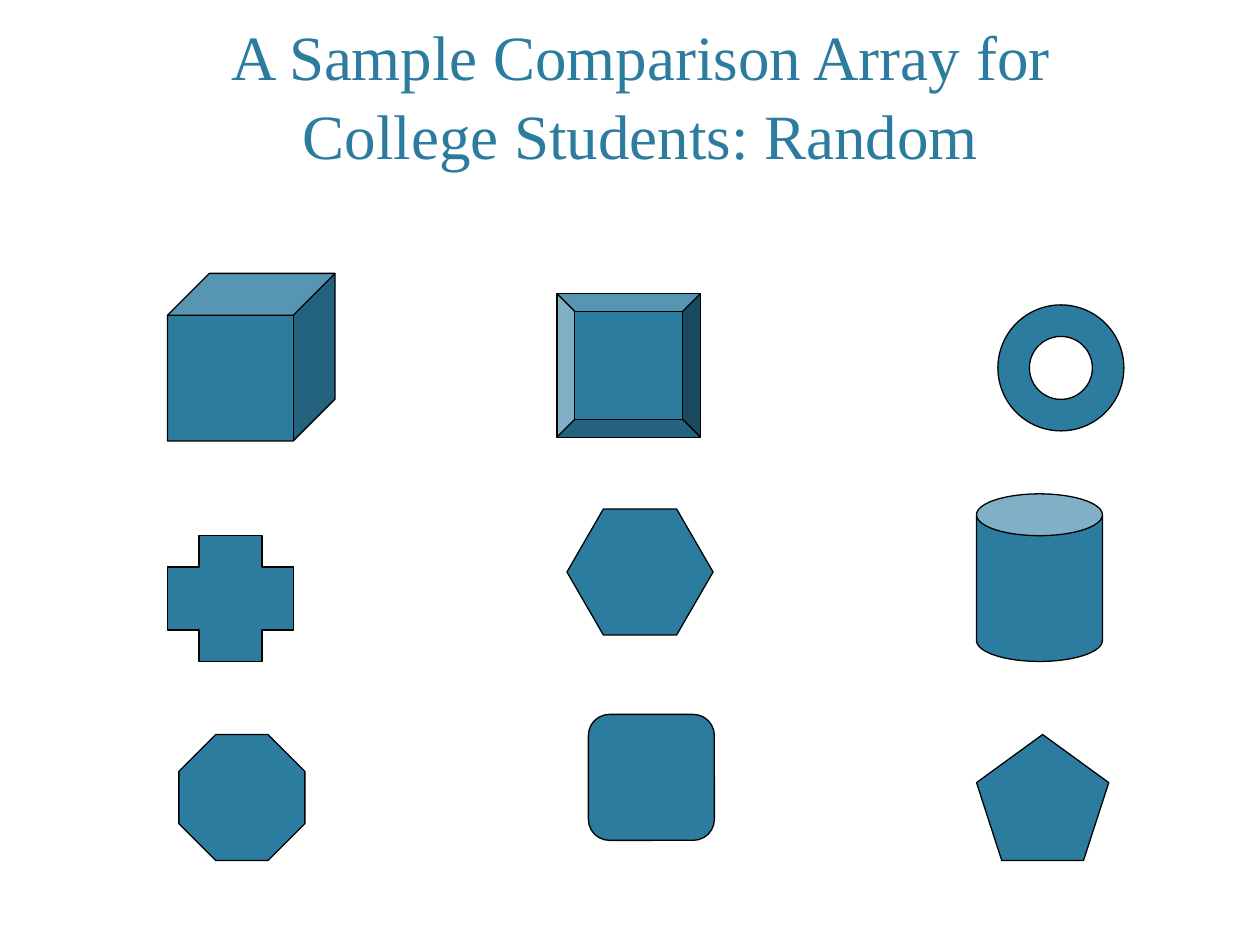
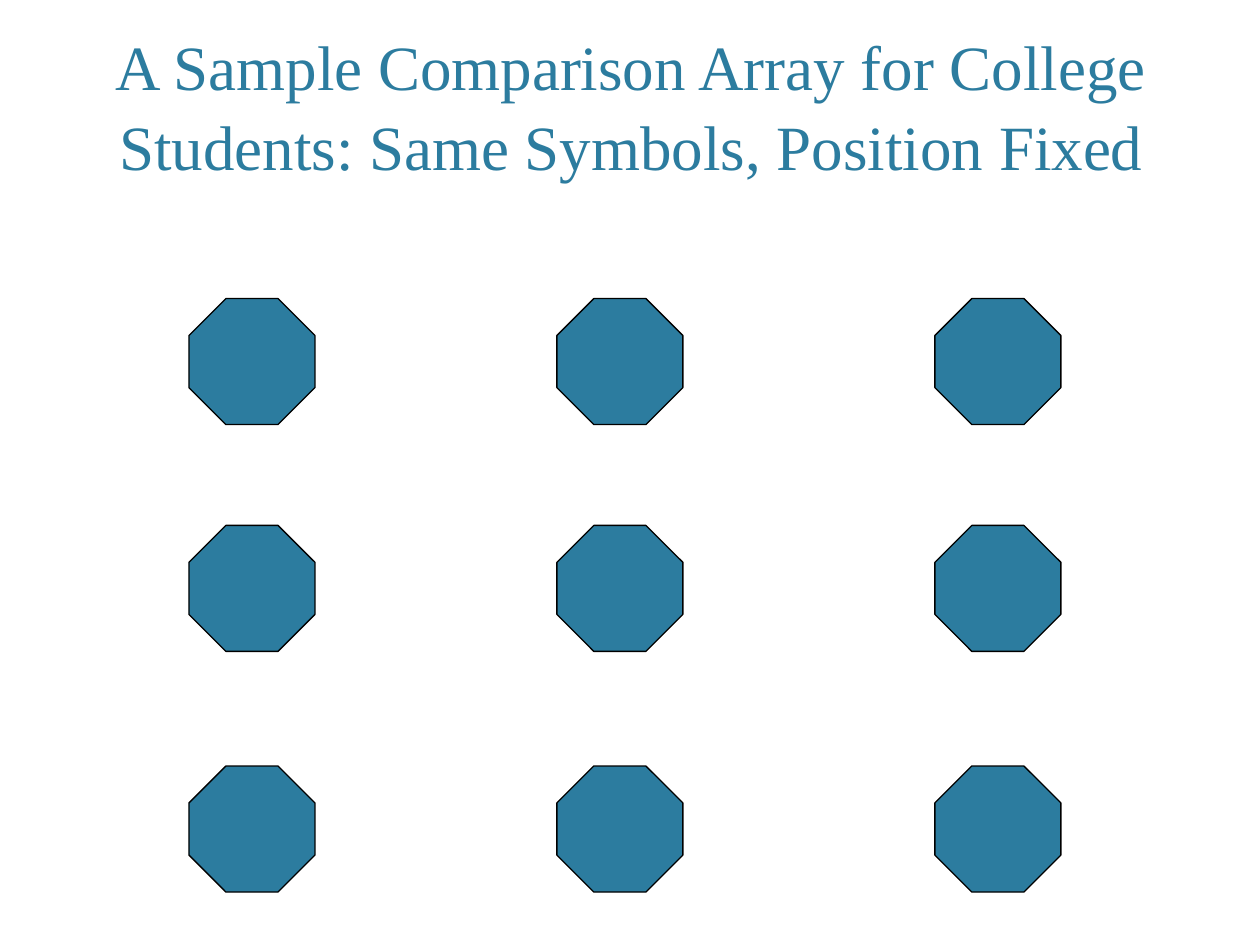
import itertools

import pptx
import pptx.dml.color
import pptx.enum.shapes
import pptx.enum.text
import pptx.util

Inches = pptx.util.Inches
SHAPE = pptx.enum.shapes.MSO_SHAPE

COLORS = {"teal": "2C7C9F", "outline": "000000"}
TITLE_FONT = "Times New Roman"
OCTAGON_CUT = 0.293

# Random array: kind, left, top, width, height, adjustments
RANDOM_SYMBOLS = [
    (SHAPE.DONUT, 7.92, 2.42, 1, 1, [0.25]),
    (SHAPE.CROSS, 1.33, 4.25, 1, 1, [0.25]),
    (SHAPE.HEXAGON, 4.5, 4.04, 1.16, 1, [0.289]),
    (SHAPE.CUBE, 1.33, 2.17, 1.33, 1.33, [0.25]),
    (SHAPE.CAN, 7.75, 3.92, 1, 1.33, [0.332]),
    (SHAPE.BEVEL, 4.42, 2.33, 1.14, 1.14, [0.125]),
    (SHAPE.OCTAGON, 1.42, 5.83, 1, 1, [OCTAGON_CUT]),
    (SHAPE.ROUNDED_RECTANGLE, 4.67, 5.67, 1, 1, [0.167]),
    (SHAPE.REGULAR_PENTAGON, 7.75, 5.83, 1.05, 1, []),
]

# Fixed array: columns and rows of equal octagons
COLUMN_LEFTS = (1.5, 4.42, 7.42)
ROW_TOPS = (2.37, 4.17, 6.08)


def rgb(name):
    return pptx.dml.color.RGBColor.from_string(COLORS[name])


def place(shape, left, top, width, height):
    shape.left, shape.top = Inches(left), Inches(top)
    shape.width, shape.height = Inches(width), Inches(height)


def add_page(deck, title_lines, title_box):
    """Add a title-only page and format its title."""
    page = deck.slides.add_slide(deck.slide_layouts[5])
    title = page.shapes.title
    place(title, *title_box)
    frame = title.text_frame
    frame.word_wrap = True
    frame.auto_size = pptx.enum.text.MSO_AUTO_SIZE.NONE
    frame.vertical_anchor = pptx.enum.text.MSO_ANCHOR.BOTTOM
    para = frame.paragraphs[0]
    para.alignment = pptx.enum.text.PP_ALIGN.CENTER
    para.line_spacing = 1.05
    for index, line in enumerate(title_lines):
        if index:
            para.add_line_break()
        span = para.add_run()
        span.text = line
        span.font.name = TITLE_FONT
        span.font.size = pptx.util.Pt(36)
        span.font.color.rgb = rgb("teal")
    return page


def add_symbol(page, kind, left, top, width, height, adjustments):
    """Add one teal symbol with a thin black outline."""
    symbol = page.shapes.add_shape(
        kind, Inches(left), Inches(top), Inches(width), Inches(height))
    for index, value in enumerate(adjustments):
        symbol.adjustments[index] = value
    symbol.shadow.inherit = False
    symbol.fill.solid()
    symbol.fill.fore_color.rgb = rgb("teal")
    symbol.line.color.rgb = rgb("outline")
    symbol.line.width = pptx.util.Pt(0.75)


def main():
    deck = pptx.Presentation()
    deck.slide_width, deck.slide_height = Inches(10), Inches(7.5)

    # Different symbols, scattered
    page = add_page(
        deck,
        ["A Sample Comparison Array for", "College Students: Random"],
        (0.75, 0.25, 8.67, 1.17))
    for symbol in RANDOM_SYMBOLS:
        add_symbol(page, *symbol)

    # Same symbol on a fixed grid
    page = add_page(
        deck,
        ["A Sample Comparison Array for College Students: "
         "Same Symbols, Position Fixed"],
        (0.19, 0.3, 9.64, 1.2))
    for top, left in itertools.product(ROW_TOPS, COLUMN_LEFTS):
        add_symbol(page, SHAPE.OCTAGON, left, top, 1, 1, [OCTAGON_CUT])

    deck.save("out.pptx")


if __name__ == "__main__":
    main()
